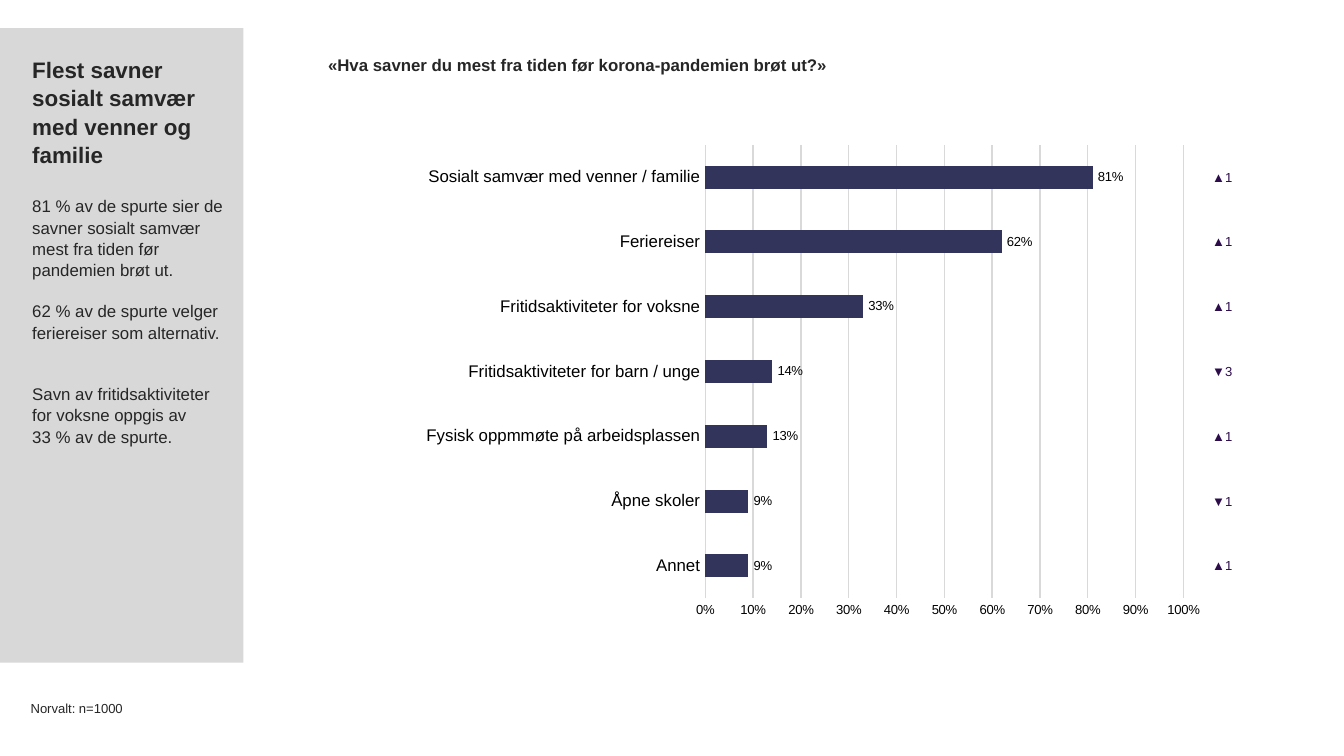
from lxml.etree import SubElement
from pptx import Presentation
from pptx.chart.data import CategoryChartData
from pptx.dml.color import RGBColor
from pptx.enum.chart import XL_CHART_TYPE, XL_LABEL_POSITION, XL_TICK_MARK
from pptx.enum.shapes import MSO_SHAPE
from pptx.enum.text import MSO_AUTO_SIZE
from pptx.oxml.ns import qn
from pptx.util import Cm, Pt

FONT = "Arial"
INK, GRID, PLUM = "262626", "D9D9D9", "2D0C4B"
PLOT = {"x": 0.46, "y": 0.088, "w": 0.499, "h": 0.765}
ROWS = [
    ("Sosialt samvær med venner / familie", 0.81, "▲1"),
    ("Feriereiser", 0.62, "▲1"),
    ("Fritidsaktiviteter for voksne", 0.33, "▲1"),
    ("Fritidsaktiviteter for barn / unge", 0.14, "▼3"),
    ("Fysisk oppmmøte på arbeidsplassen", 0.13, "▲1"),
    ("Åpne skoler", 0.09, "▼1"),
    ("Annet", 0.09, "▲1"),
]
POINTS = [
    ("Flest savner sosialt samvær med venner og familie", 12, 0),
    ("81\u00a0% av de spurte sier de savner sosialt samvær mest fra tiden "
     "før pandemien brøt ut.", 9, 14.5),
    ("62 % av de spurte velger feriereiser som alternativ.", 9, 10.8),
    ("Savn av fritidsaktiviteter for voksne oppgis av 33\u00a0% av de spurte.",
     9, 21.6),
]


def color(code):
    return RGBColor.from_string(code)


def style(font, size, code, bold=False):
    font.name = FONT
    font.size = Pt(size)
    font.bold = bold
    font.color.rgb = color(code)


def frame(slide, box, inset=0):
    text = slide.shapes.add_textbox(*map(Cm, box)).text_frame
    text.word_wrap = True
    if not inset:
        text.margin_left = text.margin_right = 0
        text.margin_top = text.margin_bottom = 0
    return text


def label(slide, box, words, size, code=INK, bold=False, inset=0):
    text = frame(slide, box, inset)
    para = text.paragraphs[0]
    para.text = words
    style(para.font, size, code, bold)
    return text


def panel(slide, box):
    left, top, width, height = box
    back = slide.shapes.add_shape(MSO_SHAPE.RECTANGLE, *map(Cm, box))
    back.shadow.inherit = False
    back.line.fill.background()
    back.fill.solid()
    back.fill.fore_color.rgb = color("BEBFC0")
    tone = next(back.fill._xPr.iter(qn("a:srgbClr")))
    SubElement(tone, qn("a:alpha")).set("val", "60000")

    text = frame(slide, (left + 0.61, top + 0.51, width - 0.99, height - 0.69))
    for i, (words, size, gap) in enumerate(POINTS):
        para = text.add_paragraph() if i else text.paragraphs[0]
        para.text = words
        para.line_spacing = 1.05
        para.space_before = Pt(gap)
        style(para.font, size, INK, bold=i == 0)


def place(chart):
    area = chart._chartSpace.chart.plotArea
    for old in area.findall(qn("c:layout")):
        area.remove(old)
    layout = area.makeelement(qn("c:layout"), {})
    area.insert(0, layout)
    manual = SubElement(layout, qn("c:manualLayout"))
    parts = [("layoutTarget", "inner"), ("xMode", "edge"), ("yMode", "edge")]
    for name, value in parts + list(PLOT.items()):
        SubElement(manual, qn("c:" + name)).set("val", str(value))


def bars(slide, box):
    data = CategoryChartData(number_format="0%")
    data.categories = [name for name, _, _ in reversed(ROWS)]
    data.add_series("Series 1", [share for _, share, _ in reversed(ROWS)])
    chart = slide.shapes.add_chart(
        XL_CHART_TYPE.BAR_CLUSTERED, *map(Cm, box), data).chart
    chart.has_legend = chart.has_title = False
    style(chart.font, 10, PLUM)
    place(chart)

    plot = chart.plots[0]
    plot.gap_width = 182
    plot.vary_by_categories = False
    fill = plot.series[0].format.fill
    fill.solid()
    fill.fore_color.rgb = color("32345C")
    plot.has_data_labels = True
    tags = plot.data_labels
    tags.show_value = True
    tags.number_format = "0%"
    tags.number_format_is_linked = False
    tags.position = XL_LABEL_POSITION.OUTSIDE_END
    style(tags.font, 7, "000000")

    names, scale = chart.category_axis, chart.value_axis
    for axis, size in ((names, 9), (scale, 7)):
        axis.major_tick_mark = axis.minor_tick_mark = XL_TICK_MARK.NONE
        style(axis.tick_labels.font, size, "000000")
    names.has_major_gridlines = False
    scale.has_major_gridlines = True
    for line in (names.format.line, scale.major_gridlines.format.line):
        line.color.rgb = color(GRID)
        line.width = Pt(0.75)
    scale.format.line.fill.background()
    scale.minimum_scale, scale.maximum_scale = 0, 1
    scale.major_unit = 0.1
    scale.tick_labels.number_format = "0%"
    scale.tick_labels.number_format_is_linked = False


def trends(slide, box):
    left, top, width, height = box
    step = height * PLOT["h"] / len(ROWS)
    first = top + height * PLOT["y"] + step / 2
    tall = 0.56
    for i, (_, _, change) in enumerate(ROWS):
        spot = (left + width - 0.45, first + i * step - tall / 2, 0.89, tall)
        text = label(slide, spot, change, 7, PLUM, inset=1)
        text.word_wrap = False
        text.auto_size = MSO_AUTO_SIZE.SHAPE_TO_FIT_TEXT


def main():
    deck = Presentation()
    deck.slide_width, deck.slide_height = Cm(25.4), Cm(14.28)
    slide = deck.slides.add_slide(deck.slide_layouts[6])
    panel(slide, (0, 0.53, 4.6, 11.99))
    label(slide, (6.2, 1.04, 14.88, 0.61),
          "«Hva savner du mest fra tiden før korona-pandemien brøt ut?»",
          9, bold=True)
    box = (5, 1.75, 18.11, 11.2)
    bars(slide, box)
    trends(slide, box)
    label(slide, (0.58, 13.23, 4.01, 0.61), "Norvalt: n=1000", 7)
    deck.save("out.pptx")


if __name__ == "__main__":
    main()
